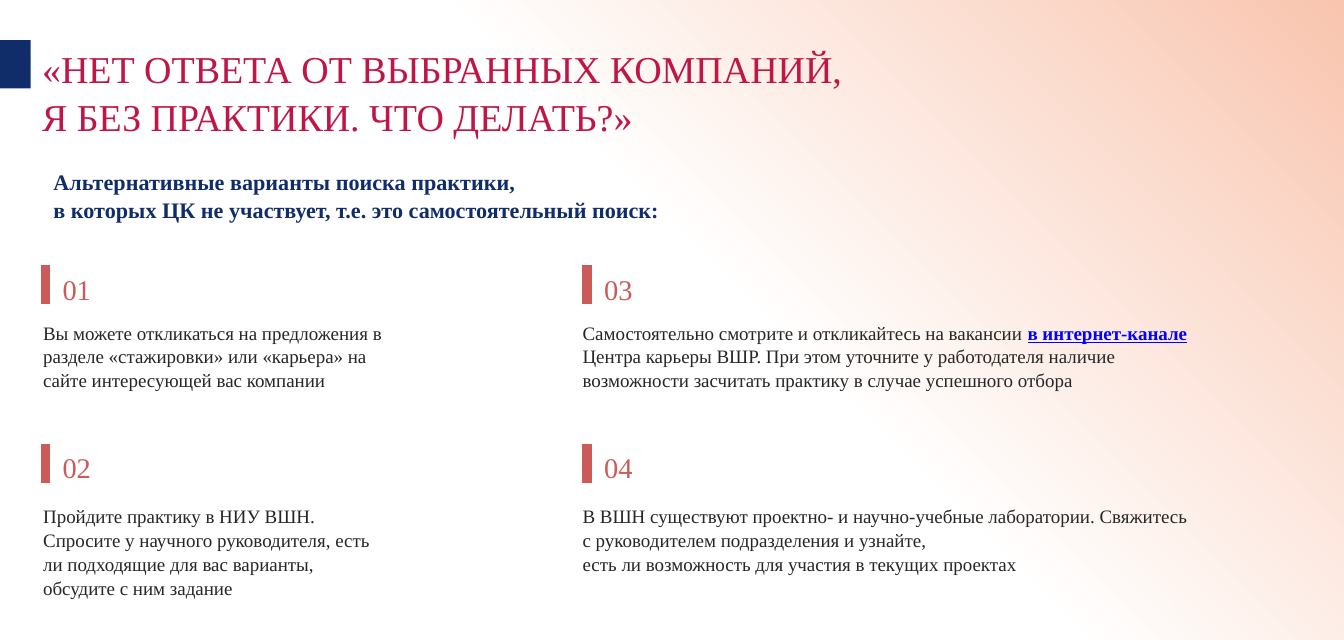
from lxml.etree import SubElement
from pptx import Presentation
from pptx.dml.color import RGBColor
from pptx.enum.shapes import MSO_CONNECTOR, MSO_SHAPE
from pptx.enum.text import MSO_ANCHOR, MSO_AUTO_SIZE, PP_ALIGN
from pptx.oxml.ns import qn
from pptx.util import Pt

NAVY, CRIMSON, CORAL, DARK, BLUE = "102D69", "C01646", "CB5B59", "262626", "0000FF"
HEADING_INSETS = (0.7, 0.7, 0, 0)
BODY_INSETS = (7.9, 3.6, 7.2, 3.6)
MARKED = {"bold": True, "underline": True, "color": BLUE}

# Left of the bar, left of the body text, width of the body text
LEFT_COLUMN = (28.8, 19.4, 237.6)
LEFT_NARROW = (28.8, 19.4, 222.5)
RIGHT_COLUMN = (371.5, 360.7, 398.9)
# Top of the bar, top of the body text
UPPER_ROW = (167.8, 198.7)
LOWER_ROW = (280.8, 314.6)

OPTIONS = [
    ("01", LEFT_COLUMN, UPPER_ROW, [
        ["Вы можете откликаться на предложения в разделе «стажировки» "
         "или «карьера» на сайте интересующей вас компании"]]),
    ("02", LEFT_NARROW, LOWER_ROW, [
        ["Пройдите практику в НИУ ВШН. Спросите у научного руководителя, "
         "есть ли подходящие для вас варианты, обсудите с ним задание"]]),
    ("03", RIGHT_COLUMN, UPPER_ROW, [
        ["Самостоятельно смотрите и откликайтесь на вакансии ",
         ("в интернет-канале ", MARKED),
         "Центра карьеры ВШР. При этом уточните у работодателя наличие "
         "возможности засчитать практику в случае успешного отбора"]]),
    ("04", RIGHT_COLUMN, LOWER_ROW, [
        ["В ВШН существуют проектно- и научно-учебные лаборатории. "
         "Свяжитесь с руководителем подразделения и узнайте,"],
        ["есть ли возможность для участия в текущих проектах"]]),
]


def set_all(target, values):
    for name, value in values.items():
        setattr(target, name, value)


def rgb(color):
    return RGBColor.from_string(color)


def fill_text(box, paragraphs, size, color, insets, bold=False, align=PP_ALIGN.LEFT):
    """Write paragraphs whose spans are plain strings or (text, format) pairs."""
    frame = box.text_frame
    set_all(frame, {"word_wrap": True, "auto_size": MSO_AUTO_SIZE.NONE,
                    "vertical_anchor": MSO_ANCHOR.TOP})
    sides = ("margin_left", "margin_top", "margin_right", "margin_bottom")
    set_all(frame, dict(zip(sides, map(Pt, insets))))
    for index, spans in enumerate(paragraphs):
        para = frame.add_paragraph() if index else frame.paragraphs[0]
        set_all(para, {"alignment": align, "line_spacing": 1.05})
        for item in spans:
            text, changes = (item, {}) if isinstance(item, str) else item
            values = {"name": "Times New Roman", "size": Pt(size),
                      "bold": bold, "color": color, **changes}
            span = para.add_run()
            span.text = text
            span.font.color.rgb = rgb(values.pop("color"))
            set_all(span.font, values)


def add_text(page, left, top, width, height, *content, **style):
    box = page.shapes.add_textbox(Pt(left), Pt(top), Pt(width), Pt(height))
    fill_text(box, *content, **style)


def add_title(page, lines):
    title = page.shapes.title
    set_all(title, {"left": Pt(25.9), "top": Pt(26.6),
                    "width": Pt(820), "height": Pt(59)})
    fill_text(title, lines, 24, CRIMSON, HEADING_INSETS)


def add_bar(page, left, top):
    bar = page.shapes.add_connector(
        MSO_CONNECTOR.STRAIGHT, Pt(left), Pt(top + 24.5), Pt(left), Pt(top))
    bar.line.color.rgb = rgb(CORAL)
    bar.line.width = Pt(6)
    SubElement(bar.line._get_or_add_ln().getparent(), qn("a:effectLst"))


def add_flag(page):
    flag = page.shapes.add_shape(
        MSO_SHAPE.RECTANGLE, 0, Pt(25.4), Pt(19.4), Pt(30.5))
    flag.shadow.inherit = False
    flag.fill.solid()
    flag.fill.fore_color.rgb = rgb(NAVY)
    flag.line.fill.background()


def add_option(page, number, column, row, paragraphs):
    bar_left, body_left, body_width = column
    bar_top, body_top = row
    add_bar(page, bar_left, bar_top)
    add_text(page, bar_left + 4.3, bar_top + 2.2, 30.2, 24.5,
             [[number]], 18, CORAL, HEADING_INSETS, align=PP_ALIGN.CENTER)
    add_text(page, body_left, body_top, body_width, 65,
             paragraphs, 12, DARK, BODY_INSETS)


def paint_background(page):
    fill = page.background.fill
    fill.gradient()
    fill.gradient_angle = 45
    for stop, position, color in zip(fill.gradient_stops, (0.54, 1), ("FFFFFF", "F9C5AF")):
        stop.position = position
        stop.color.rgb = rgb(color)


def main():
    deck = Presentation()
    set_all(deck, {"slide_width": Pt(850.3), "slide_height": Pt(404.6)})
    page = deck.slides.add_slide(deck.slide_layouts[5])
    paint_background(page)
    add_title(page, [["«НЕТ ОТВЕТА ОТ ВЫБРАННЫХ КОМПАНИЙ,"],
                     ["Я БЕЗ ПРАКТИКИ. ЧТО ДЕЛАТЬ?»"]])
    add_flag(page)
    add_text(page, 33.1, 105.1, 427, 34,
             [["Альтернативные варианты поиска практики,"],
              ["в которых ЦК не участвует, т.е. это самостоятельный поиск:"]],
             14, NAVY, HEADING_INSETS, bold=True)
    for option in OPTIONS:
        add_option(page, *option)
    deck.save("out.pptx")


if __name__ == "__main__":
    main()
